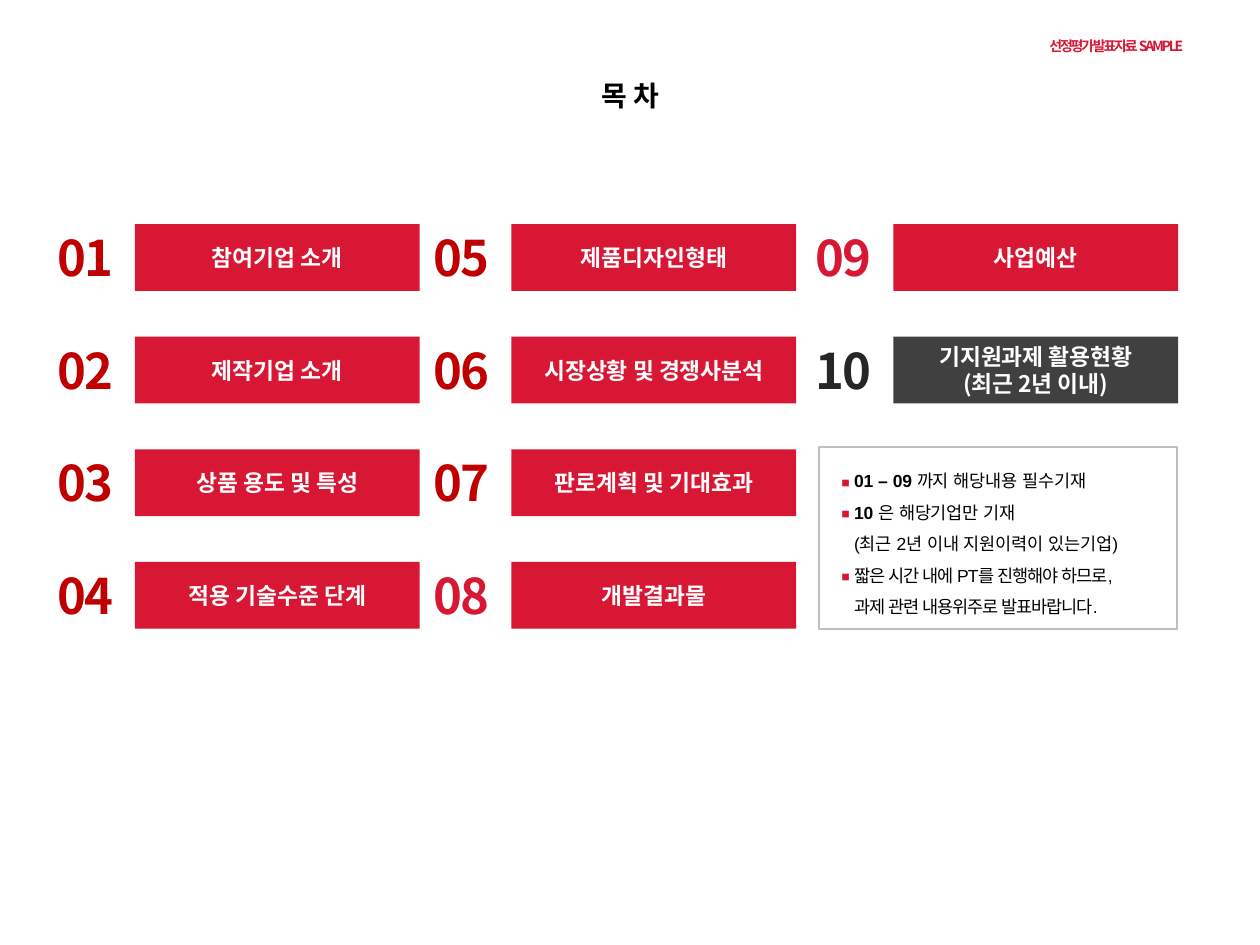
import pptx
import pptx.util
import pptx.dml.color
import pptx.enum.shapes
import pptx.enum.text
from lxml import etree
from pptx.oxml.ns import qn

Inches, Pt = pptx.util.Inches, pptx.util.Pt
SHAPE = pptx.enum.shapes.MSO_SHAPE
ANCHOR = pptx.enum.text.MSO_ANCHOR
CENTER = pptx.enum.text.PP_ALIGN.CENTER
LEFT = pptx.enum.text.PP_ALIGN.LEFT

# Content
RED, DARK_RED, GRAY, CHARCOAL = "D71733", "C00000", "404040", "262626"
WHITE, BLACK, BORDER = "FFFFFF", "000000", "BFBFBF"
KOREAN, LATIN = "Noto Sans CJK KR", "Arial"
TITLE = "목 차"
HEADER = "선정평가 발표자료 SAMPLE"
COLUMNS = [  # label left, then (lines, number colour, label fill)
    (1.07, [(["참여기업 소개"], DARK_RED, RED),
            (["제작기업 소개"], DARK_RED, RED),
            (["상품 용도 및 특성"], DARK_RED, RED),
            (["적용 기술수준 단계"], DARK_RED, RED)]),
    (4.06, [(["제품디자인형태"], DARK_RED, RED),
            (["시장상황 및 경쟁사분석"], DARK_RED, RED),
            (["판로계획 및 기대효과"], DARK_RED, RED),
            (["개발결과물"], RED, RED)]),
    (7.09, [(["사업예산"], RED, RED),
            (["기지원과제 활용현황", "(최근 2년 이내)"], CHARCOAL, GRAY)]),
]
NOTES = [  # bulleted, bold part, plain part, letter spacing
    (True, "01 – 09 ", "까지 해당내용 필수기재", 0),
    (True, "10 ", "은 해당기업만 기재", 0),
    (False, "", "(최근 2년 이내 지원이력이 있는기업)", 0),
    (True, "", "짧은 시간 내에 PT를 진행해야 하므로,", -0.5),
    (False, "", "과제 관련 내용위주로 발표바랍니다.", -0.5),
]

# Grid
TOP, PITCH, LABEL_W, LABEL_H = 1.78, 0.893, 2.26, 0.53
NUMBER_W, NUMBER_H = 0.79, 0.57


def rgb(value):
    return pptx.dml.color.RGBColor.from_string(value)


def add_run(p, text, size, color, font=KOREAN, bold=True, spacing=0):
    r = p.add_run()
    r.text = text
    r.font.size, r.font.bold, r.font.name = Pt(size), bold, font
    r.font.color.rgb = rgb(color)
    rPr = r.font._element
    rPr.set("spc", str(round(spacing * 100)))
    etree.SubElement(rPr, qn("a:ea")).set("typeface", font)


def add_paragraph(tf, first, align=CENTER):
    p = tf.paragraphs[0] if first else tf.add_paragraph()
    p.alignment = align
    return p


def add_text_box(s, left, top, width, height):
    tf = s.shapes.add_textbox(Inches(left), Inches(top), Inches(width), Inches(height)).text_frame
    tf.word_wrap = True
    return tf


def add_box(s, preset, left, top, width, height):
    sp = s.shapes.add_shape(preset, Inches(left), Inches(top), Inches(width), Inches(height))
    sp.shadow.inherit = False
    return sp


def add_label(s, left, top, lines, fill):
    sp = add_box(s, SHAPE.ROUNDED_RECTANGLE, left, top, LABEL_W, LABEL_H)
    sp.adjustments[0] = 0
    sp.fill.solid()
    sp.fill.fore_color.rgb = rgb(fill)
    sp.line.fill.background()
    tf = sp.text_frame
    tf.margin_left = tf.margin_right = tf.margin_top = tf.margin_bottom = 0
    tf.vertical_anchor = ANCHOR.MIDDLE
    for i, line in enumerate(lines):
        add_run(add_paragraph(tf, i == 0), line, 13, WHITE)


def set_indent(p, bulleted):
    pPr = p._p.get_or_add_pPr()
    hang = Inches(0.1)
    pPr.set("marL", str(hang))
    pPr.set("indent", str(-hang if bulleted else 0))
    if bulleted:
        color = etree.SubElement(pPr, qn("a:buClr"))
        etree.SubElement(color, qn("a:srgbClr")).set("val", RED)
        etree.SubElement(pPr, qn("a:buFont")).set("typeface", KOREAN)
        etree.SubElement(pPr, qn("a:buChar")).set("char", "◾")


prs = pptx.Presentation()
prs.slide_width, prs.slide_height = Inches(10), Inches(7.5)
s = prs.slides.add_slide(prs.slide_layouts[5])

# Title and header
title = s.shapes.title
title.left, title.top, title.width, title.height = map(Inches, (1.32, 0.53, 7.36, 0.46))
tf = title.text_frame
tf.vertical_anchor = ANCHOR.MIDDLE
add_run(add_paragraph(tf, True), TITLE, 16, BLACK)
tf = add_text_box(s, 8.15, 0.25, 1.42, 0.24)
add_run(add_paragraph(tf, True), HEADER, 8, RED, spacing=-1.3)

# Numbered contents
number = 0
for left, items in COLUMNS:
    for row, (lines, color, fill) in enumerate(items):
        number += 1
        top = TOP + row * PITCH
        add_label(s, left, top, lines, fill)
        tf = add_text_box(s, left - NUMBER_W, top - 0.02, NUMBER_W, NUMBER_H)
        add_run(add_paragraph(tf, True), f"{number:02d}", 28, color, spacing=-1)

# Notes
frame = add_box(s, SHAPE.RECTANGLE, 6.5, 3.55, 2.84, 1.44)
frame.fill.background()
frame.line.color.rgb = rgb(BORDER)
frame.line.width = Pt(1)
tf = add_text_box(s, 6.58, 3.6, 2.67, 1.33)
for i, (bulleted, strong, plain, spacing) in enumerate(NOTES):
    p = add_paragraph(tf, i == 0, LEFT)
    p.line_spacing = 1.5
    set_indent(p, bulleted)
    if strong:
        add_run(p, strong, 10, BLACK, LATIN)
    add_run(p, plain, 10, BLACK, LATIN, False, spacing)

prs.save("out.pptx")
